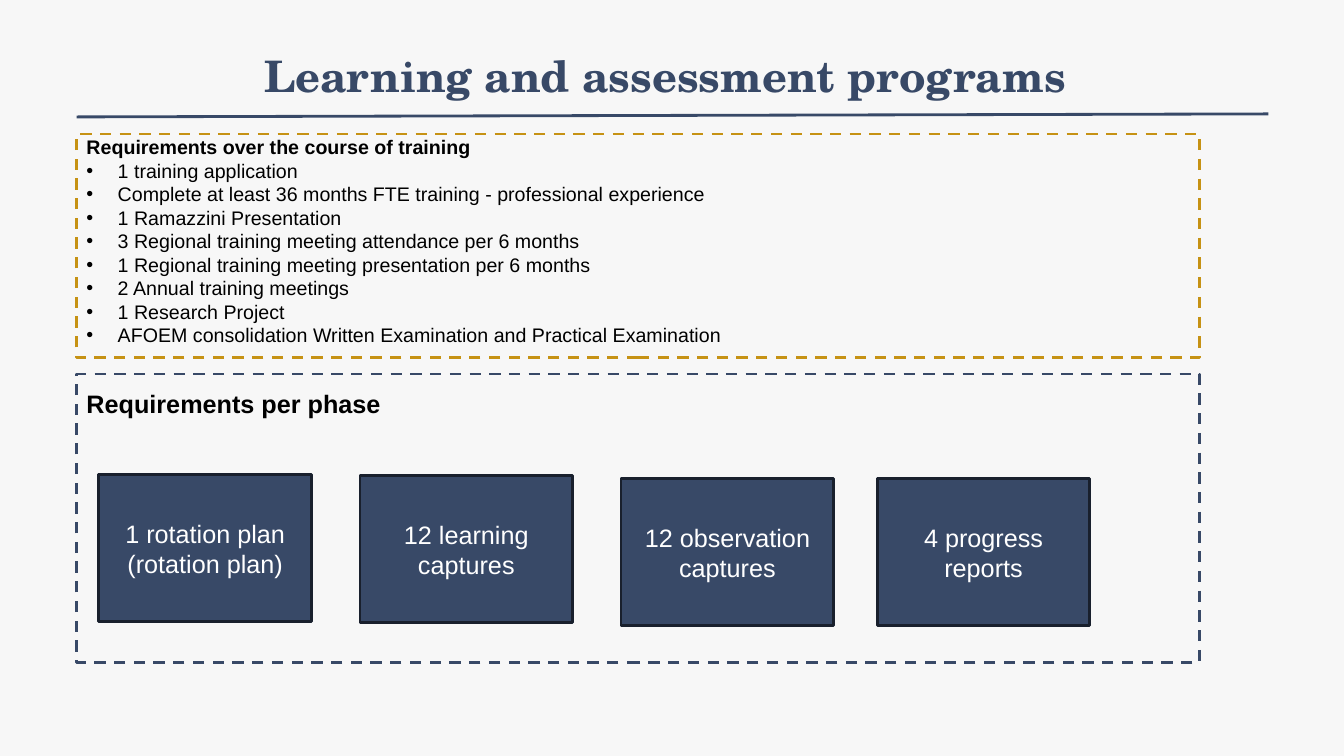
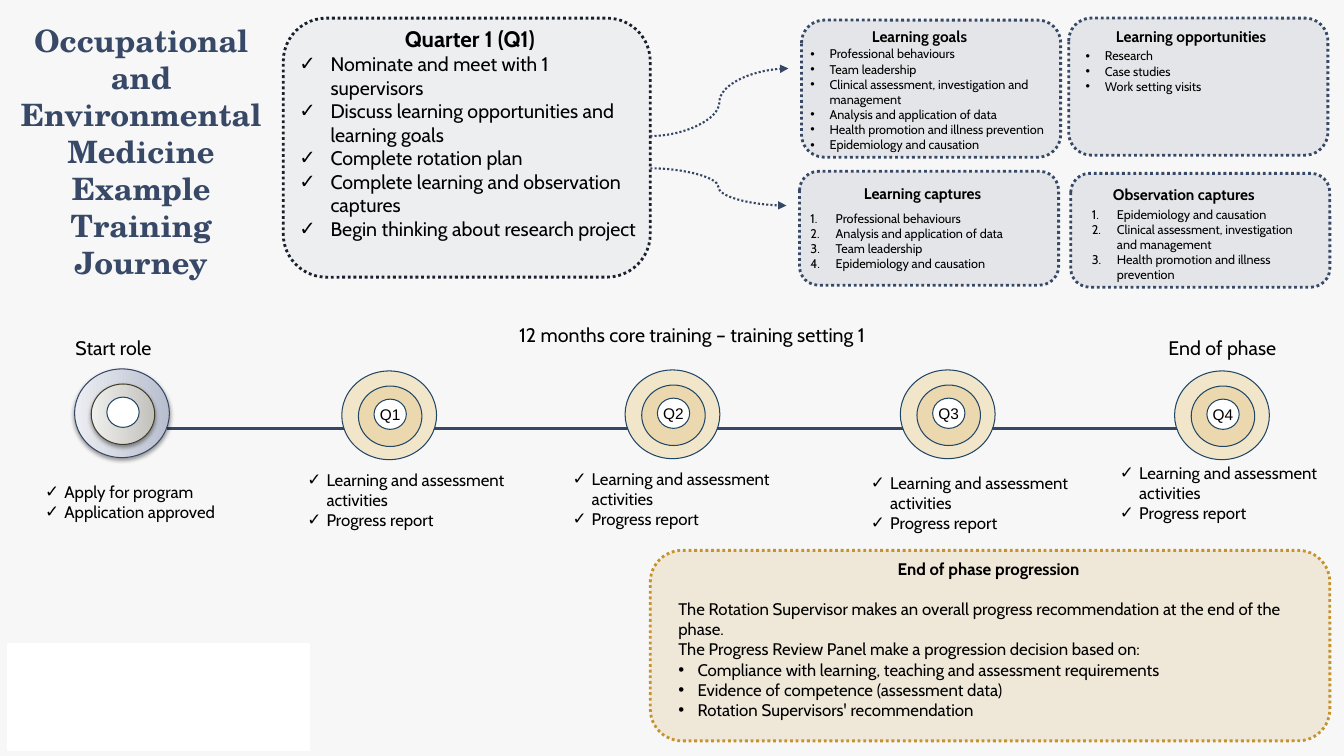
from dataclasses import dataclass
from typing import Optional

from pptx import Presentation
from pptx.dml.color import RGBColor
from pptx.enum.dml import MSO_LINE
from pptx.enum.shapes import MSO_CONNECTOR as Link, MSO_SHAPE as Preset
from pptx.enum.text import MSO_ANCHOR as Anchor, PP_ALIGN as Align
from pptx.oxml.ns import qn
from pptx.oxml.xmlchemy import OxmlElement
from pptx.util import Inches, Pt

COLORS = {
    "page": "F7F7F7", "navy": "384967", "line_navy": "364766", "ink": "19202D",
    "gold": "C69214", "end_gold": "C5932B", "ring": "F2E6CA", "ring_mid": "D3A440",
    "ring_line": "204666", "start_line": "423D29", "white": "FFFFFF", "black": "000000",
}
START_GRADIENTS = {"outer": ("ECEEF2", "B8BECE"), "middle": ("EFEFED", "C3C1BC")}
TITLE_FONT, BODY_FONT, JOURNEY_FONT = "TeX Gyre Schola", "Arial", "Cabin"


@dataclass(frozen=True)
class Box:
    left: float
    top: float
    width: float
    height: float

    def lengths(self) -> tuple:
        return tuple(Inches(v) for v in (self.left, self.top, self.width, self.height))


@dataclass(frozen=True)
class Para:
    text: str
    size: float
    bold: bool = False
    bullet: str = ""  # a character, or "1." for automatic numbers
    indent: float = 0.19
    align: Align = Align.LEFT
    before: float = 0


@dataclass(frozen=True)
class Topic:
    frame: Box
    heading: str
    heading_box: Box
    items: list
    items_box: Box
    bullet: str
    indent: float


@dataclass(frozen=True)
class Milestone:
    x: float
    y: float
    label: str
    tasks_box: Box
    tasks: tuple = ("Learning and assessment activities", "Progress report")


def rgb(name: str) -> RGBColor:
    return RGBColor.from_string(COLORS.get(name, name))


def add_child(parent, tag: str, **attributes):
    child = OxmlElement(tag)
    for key, value in attributes.items():
        child.set(key, str(value))
    parent.append(child)
    return child


# Text
def bulleted(texts, size: float, bullet: str, indent: float = 0.19) -> list:
    return [Para(text, size, bullet=bullet, indent=indent) for text in texts]


def write(frame, paras: list, font: str, color: str = "black", anchor=Anchor.TOP) -> None:
    frame.word_wrap = True
    frame.vertical_anchor = anchor
    for index, para in enumerate(paras):
        line = frame.paragraphs[0] if index == 0 else frame.add_paragraph()
        line.alignment = para.align
        if para.before:
            line._p.get_or_add_pPr()
            line.space_before = Pt(para.before)
        if para.bullet:
            props = line._p.get_or_add_pPr()
            props.set("marL", str(Inches(para.indent)))
            props.set("indent", str(-Inches(para.indent)))
            add_child(props, "a:buFont", typeface="Arial")
            if para.bullet == "1.":
                add_child(props, "a:buAutoNum", type="arabicPeriod")
            else:
                add_child(props, "a:buChar", char=para.bullet)
        run = line.add_run()
        run.text = para.text
        run.font.name, run.font.size, run.font.bold = font, Pt(para.size), para.bold
        run.font.color.rgb = rgb(color)


def add_text(slide, box: Box, paras: list, font: str, color: str = "black", anchor=Anchor.TOP):
    frame = slide.shapes.add_textbox(*box.lengths()).text_frame
    write(frame, paras, font, color, anchor)
    return frame


def add_title(slide, box: Box, lines: list, size: float) -> None:
    paras = [Para(text, size, bold=True, align=Align.CENTER) for text in lines]
    frame = add_text(slide, box, paras, TITLE_FONT, "navy", Anchor.MIDDLE)
    frame.margin_left = frame.margin_right = Inches(0.07)
    frame.margin_top = frame.margin_bottom = Inches(0.04)


# Shapes and lines
def add_panel(slide, preset, box: Box, line: str, width: float = 2, fill: Optional[str] = None,
              opacity: int = 100, dash=None):
    panel = slide.shapes.add_shape(preset, *box.lengths())
    panel.shadow.inherit = False
    if fill:
        panel.fill.solid()
        panel.fill.fore_color.rgb = rgb(fill)
        if opacity < 100:
            color = panel.element.spPr.find(qn("a:solidFill"))[0]
            add_child(color, "a:alpha", val=opacity * 1000)
    else:
        panel.fill.background()
    panel.line.color.rgb = rgb(line)
    panel.line.width = Pt(width)
    if dash:
        panel.line.dash_style = dash
    return panel


def add_line(slide, kind, start: tuple, end: tuple, color: str, width: float):
    points = [Inches(v) for v in start + end]
    link = slide.shapes.add_connector(kind, *points)
    link.line.color.rgb = rgb(color)
    link.line.width = Pt(width)
    add_child(link.element.spPr, "a:effectLst")
    return link


def add_curved_arrow(slide, start: tuple, end: tuple) -> None:
    arrow = add_line(slide, Link.CURVE, start, end, "line_navy", 1.5)
    arrow.line.dash_style = MSO_LINE.ROUND_DOT
    add_child(arrow.line._get_or_add_ln(), "a:tailEnd", type="triangle")


def add_ring(slide, x: float, y: float, width: float, height: float, **style):
    box = Box(x - width / 2, y - height / 2, width, height)
    return add_panel(slide, Preset.OVAL, box, width=0.75, **style)


def shade_start(ring, colors: tuple) -> None:
    ring.fill.gradient()
    ring.fill.gradient_angle = 0
    for stop, color in zip(ring.fill.gradient_stops, colors):
        stop.color.rgb = rgb(color)
    effects = ring.element.spPr.find(qn("a:effectLst"))
    shadow = add_child(effects, "a:outerShdw", blurRad=Pt(3.1), dist=Pt(1.6), dir=5400000)
    add_child(add_child(shadow, "a:srgbClr", val=COLORS["black"]), "a:alpha", val=38000)


def add_milestone(slide, stone: Milestone) -> None:
    is_start = not stone.label
    outer = add_ring(slide, stone.x, stone.y, 0.94, 0.88, fill="ring",
                     line="line_navy" if is_start else "ring_line")
    middle = add_ring(slide, stone.x + 0.01, stone.y + 0.01, 0.63, 0.6, fill="ring_mid",
                      opacity=20, line="start_line" if is_start else "ring_line")
    core = add_ring(slide, stone.x + 0.01, stone.y - 0.01, 0.32, 0.3, fill="white",
                    line="ring_line")
    if is_start:
        shade_start(outer, START_GRADIENTS["outer"])
        shade_start(middle, START_GRADIENTS["middle"])
    else:
        frame = core.text_frame
        frame.margin_left = frame.margin_right = frame.margin_top = frame.margin_bottom = 0
        write(frame, [Para(stone.label, 11, align=Align.CENTER)], BODY_FONT,
              anchor=Anchor.MIDDLE)
        frame.word_wrap = False
    add_text(slide, stone.tasks_box, bulleted(stone.tasks, 12, "✓"), JOURNEY_FONT)


def add_topic(slide, topic: Topic) -> None:
    add_panel(slide, Preset.ROUNDED_RECTANGLE, topic.frame, "navy", fill="navy",
              opacity=10, dash=MSO_LINE.ROUND_DOT)
    add_text(slide, topic.heading_box, [Para(topic.heading, 11, bold=True)], JOURNEY_FONT)
    add_text(slide, topic.items_box, bulleted(topic.items, 9, topic.bullet, topic.indent),
             JOURNEY_FONT)


def add_slide(deck):
    slide = deck.slides.add_slide(deck.slide_layouts[6])
    slide.background.fill.solid()
    slide.background.fill.fore_color.rgb = rgb("page")
    return slide


# Slide 1: requirements
def build_programs(deck) -> None:
    slide = add_slide(deck)
    add_title(slide, Box(1.59, 0.29, 10.01, 0.91), ["Learning and assessment programs"], 31)
    add_line(slide, Link.STRAIGHT, (0.76, 1.16), (12.58, 1.13), "navy", 2)

    add_panel(slide, Preset.RECTANGLE, Box(0.76, 1.33, 11.14, 2.22), "gold", dash=MSO_LINE.DASH)
    requirements = [
        "1 training application",
        "Complete at least 36 months FTE training - professional experience",
        "1 Ramazzini Presentation",
        "3 Regional training meeting attendance per 6 months",
        "1 Regional training meeting presentation per 6 months",
        "2 Annual training meetings",
        "1 Research Project",
        "AFOEM consolidation Written Examination and Practical Examination",
    ]
    add_text(slide, Box(0.76, 1.29, 9.84, 2.22),
             [Para("Requirements over the course of training", 14, bold=True)]
             + bulleted(requirements, 14, "•", 0.31), BODY_FONT)

    add_panel(slide, Preset.RECTANGLE, Box(0.76, 3.71, 11.14, 2.86), "navy", dash=MSO_LINE.DASH)
    add_text(slide, Box(0.76, 3.8, 6.67, 0.4),
             [Para("Requirements per phase", 18, bold=True)], BODY_FONT)
    for left, top, text in [
        (0.98, 4.71, "1 rotation plan (rotation plan)"),
        (3.57, 4.72, "12 learning captures"),
        (6.16, 4.75, "12 observation captures"),
        (8.7, 4.75, "4 progress reports"),
    ]:
        card = add_panel(slide, Preset.RECTANGLE, Box(left, top, 2.11, 1.46), "ink", fill="navy")
        write(card.text_frame, [Para(text, 18, align=Align.CENTER)], BODY_FONT, "white",
              Anchor.MIDDLE)


# Slide 2: training journey
TOPICS = [
    Topic(Box(7.95, 0.2, 2.57, 1.36), "Learning goals", Box(8.55, 0.22, 1.6, 0.29),
          ["Professional behaviours", "Team leadership",
           "Clinical assessment, investigation and management",
           "Analysis and application of data", "Health promotion and illness prevention",
           "Epidemiology and causation"], Box(7.94, 0.41, 2.68, 1.46), "•", 0.19),
    Topic(Box(10.6, 0.18, 2.57, 1.36), "Learning opportunities", Box(10.97, 0.22, 1.9, 0.29),
          ["Research", "Case studies", "Work setting visits"],
          Box(10.67, 0.43, 2.28, 0.71), "•", 0.19),
    Topic(Box(7.93, 1.7, 2.57, 1.13), "Learning captures", Box(8.47, 1.78, 1.6, 0.29),
          ["Professional behaviours", "Analysis and application of data", "Team leadership",
           "Epidemiology and causation"], Box(7.94, 2.04, 2.28, 0.86), "1.", 0.25),
    Topic(Box(10.62, 1.72, 2.57, 1.13), "Observation captures", Box(10.94, 1.79, 1.9, 0.29),
          ["Epidemiology and causation", "Clinical assessment, investigation and management",
           "Health promotion and illness prevention"],
          Box(10.73, 2, 2.28, 0.86), "1.", 0.25),
]
MILESTONES = [
    Milestone(1.21, 4.1, "", Box(0.35, 4.73, 2.16, 0.5),
              ("Apply for program", "Application approved")),
    Milestone(3.86, 4.12, "Q1", Box(2.95, 4.61, 2.19, 0.71)),
    Milestone(6.67, 4.11, "Q2", Box(5.58, 4.6, 2.62, 0.71)),
    Milestone(9.4, 4.11, "Q3", Box(8.54, 4.64, 2.19, 0.71)),
    Milestone(12.12, 4.12, "Q4", Box(11.01, 4.54, 2.32, 0.71)),
]


def build_journey(deck) -> None:
    slide = add_slide(deck)
    add_title(slide, Box(0.06, 0.86, 2.68, 1.28),
              ["Occupational and Environmental Medicine Example", "Training Journey"], 22)

    # First quarter, with arrows to its topics
    add_panel(slide, Preset.ROUNDED_RECTANGLE, Box(2.81, 0.18, 3.64, 2.57), "ink", fill="navy",
              opacity=5, dash=MSO_LINE.ROUND_DOT)
    quarter_tasks = [
        "Nominate and meet with 1 supervisors", "Discuss learning opportunities and learning goals",
        "Complete rotation plan", "Complete learning and observation captures",
        "Begin thinking about research project",
    ]
    add_text(slide, Box(2.87, 0.2, 3.58, 2.69),
             [Para("Quarter 1 (Q1)", 16, bold=True, align=Align.CENTER)]
             + bulleted(quarter_tasks, 14, "✓", 0.31), JOURNEY_FONT)
    for topic in TOPICS:
        add_topic(slide, topic)
    add_curved_arrow(slide, (6.45, 1.35), (7.82, 0.68))
    add_curved_arrow(slide, (6.45, 1.67), (7.8, 2.04))

    # Timeline
    add_line(slide, Link.STRAIGHT, (0.9, 4.25), (12.34, 4.25), "line_navy", 2.25)
    for stone in MILESTONES:
        add_milestone(slide, stone)
    for left, top, width, caption in [
        (0.65, 3.28, 1.2, "Start role"), (11.49, 3.28, 1.5, "End of phase"),
        (5.05, 3.15, 4, "12 months core training – training setting 1"),
    ]:
        add_text(slide, Box(left, top, width, 0.34), [Para(caption, 14)], JOURNEY_FONT)

    # End of phase
    add_panel(slide, Preset.ROUNDED_RECTANGLE, Box(6.45, 5.46, 6.74, 1.89), "end_gold",
              fill="end_gold", opacity=15, dash=MSO_LINE.ROUND_DOT)
    add_text(slide, Box(6.63, 5.49, 6.35, 1.72), [
        Para("End of phase progression", 12, bold=True, align=Align.CENTER),
        Para("The Rotation Supervisor makes an overall progress recommendation at the end of "
             "the phase.", 12, before=14.5),
        Para("The Progress Review Panel make a progression decision based on:", 12),
        *bulleted(["Compliance with learning, teaching and assessment requirements",
                   "Evidence of competence (assessment data)",
                   "Rotation Supervisors' recommendation"], 12, "•"),
    ], JOURNEY_FONT)
    add_panel(slide, Preset.RECTANGLE, Box(0.08, 6.39, 2.98, 1.05), "white", fill="white")


def main() -> None:
    deck = Presentation()
    deck.slide_width, deck.slide_height = Inches(13.33), Inches(7.5)
    build_programs(deck)
    build_journey(deck)
    deck.save("out.pptx")


if __name__ == "__main__":
    main()
